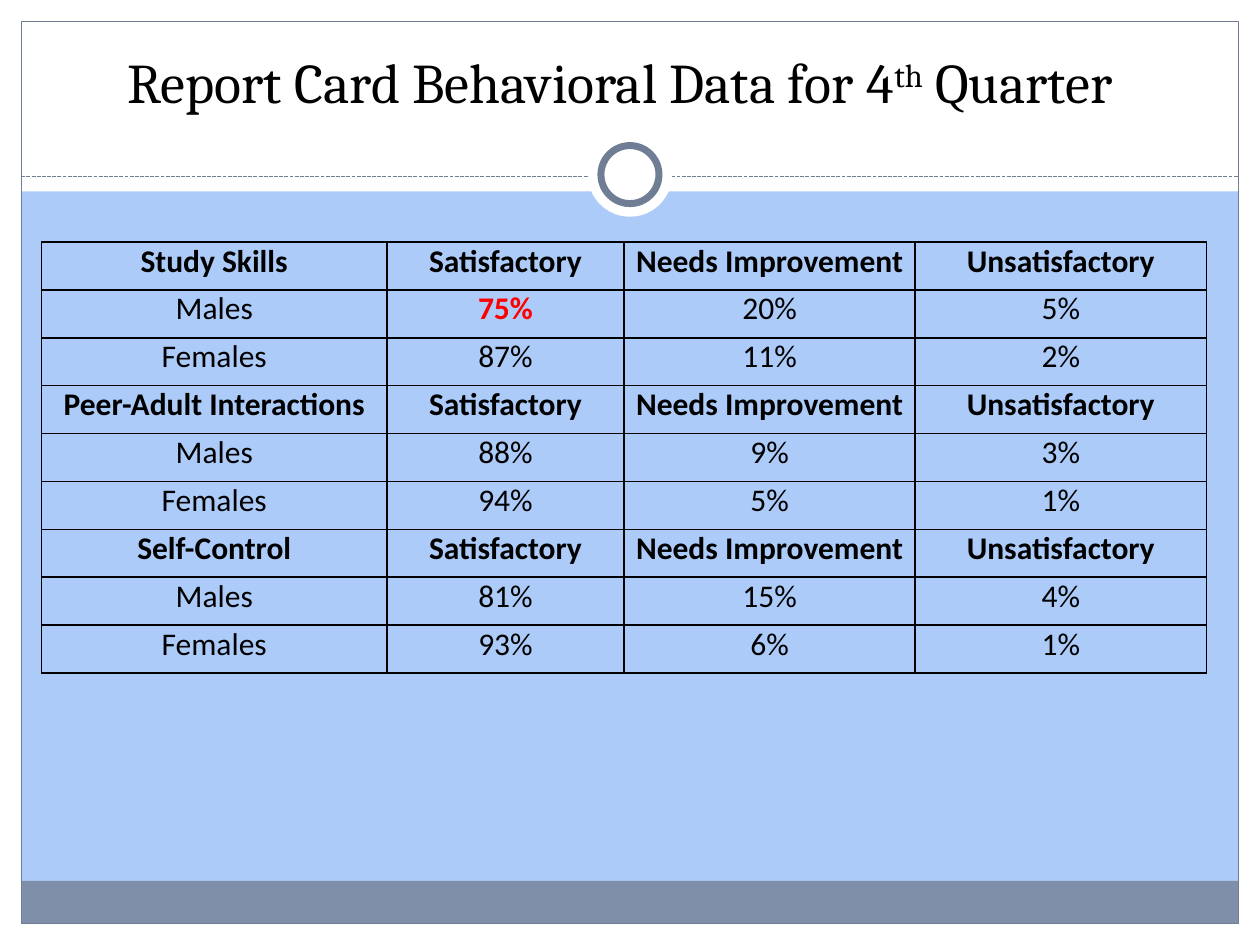
import pptx
import pptx.util
import pptx.oxml
import pptx.oxml.ns
import pptx.dml.color
import pptx.enum.dml
import pptx.enum.shapes
import pptx.enum.text

Cm, Pt = pptx.util.Cm, pptx.util.Pt
SHAPE = pptx.enum.shapes.MSO_SHAPE

TITLE = [("Report Card Behavioral Data for 4", 0), ("th", 30), (" Quarter", 0)]
RATINGS = ["Satisfactory", "Needs Improvement", "Unsatisfactory"]
SKILLS = [
    ("Study Skills", ["75%", "20%", "5%"], ["87%", "11%", "2%"]),
    ("Peer-Adult Interactions", ["88%", "9%", "3%"], ["94%", "5%", "1%"]),
    ("Self-Control", ["81%", "15%", "4%"], ["93%", "6%", "1%"]),
]
FLAGGED = {"75%"}

THEME = {
    "background": "ACCBF9", "paper": "FFFFFF", "footer": "7F8FA9",
    "rule": "707E95", "text": "000000", "flag": "FF0000",
    "title_font": "Cambria", "table_font": "Calibri",
    "title_size": 32, "table_size": 18,
}

W, H = 25.4, 19.05
MARGIN = 0.43
HEADER_H = 3.86
FOOTER_H = 0.86
RULE_Y = 3.56
RING_Y = 3.52
TABLE_LEFT, TABLE_TOP = 0.84, 4.88
COL_WIDTHS = [6.96, 4.78, 5.87, 5.87]
ROW_H = 0.965


def rgb(name):
    return pptx.dml.color.RGBColor.from_string(THEME[name])


def add_text(p, text, font, size, color="text", bold=False, baseline=0):
    p.alignment = pptx.enum.text.PP_ALIGN.CENTER
    r = p.add_run()
    r.text = text
    r.font.name = THEME[font]
    r.font.size = Pt(THEME[size])
    r.font.bold = bold
    r.font.color.rgb = rgb(color)
    if baseline:
        r.font._element.set("baseline", str(baseline * 1000))


def add_shape(s, kind, x, y, w, h, fill=None, line=None, weight=0.75):
    sp = s.shapes.add_shape(kind, Cm(x), Cm(y), Cm(w), Cm(h))
    sp.shadow.inherit = False
    if fill:
        sp.fill.solid()
        sp.fill.fore_color.rgb = rgb(fill)
    else:
        sp.fill.background()
    if line:
        sp.line.color.rgb = rgb(line)
        sp.line.width = Pt(weight)
    else:
        sp.line.fill.background()


def add_circle(s, size, **style):
    add_shape(s, SHAPE.OVAL, (W - size) / 2, RING_Y - size / 2, size, size, **style)


def add_frame(s):
    inner_w, inner_h = W - 2 * MARGIN, H - 2 * MARGIN
    for box in [(0, H - MARGIN, W, MARGIN), (0, 0, W, HEADER_H),
                (0, 0, MARGIN, H), (W - MARGIN, 0, MARGIN, H)]:
        add_shape(s, SHAPE.RECTANGLE, *box, fill="paper")
    add_shape(s, SHAPE.RECTANGLE, MARGIN, H - MARGIN - FOOTER_H, inner_w, FOOTER_H,
              fill="footer")
    add_shape(s, SHAPE.RECTANGLE, MARGIN, MARGIN, inner_w, inner_h, line="rule")
    rule = s.shapes.add_connector(pptx.enum.shapes.MSO_CONNECTOR.STRAIGHT,
                                  Cm(MARGIN), Cm(RULE_Y), Cm(W - MARGIN), Cm(RULE_Y))
    rule.line.color.rgb = rgb("rule")
    rule.line.width = Pt(0.75)
    rule.line.dash_style = pptx.enum.dml.MSO_LINE.SQUARE_DOT
    pptx.oxml.ns.qn("a:effectLst")
    rule.element.spPr.append(pptx.oxml.parse_xml(
        f'<a:effectLst {pptx.oxml.ns.nsdecls("a")}/>'))
    add_circle(s, 1.7, fill="paper")
    add_circle(s, 1.17, fill="paper", line="rule", weight=4)


def style_cell(cell):
    tc_pr = cell._tc.get_or_add_tcPr()
    for side in "LRTB":
        tc_pr.append(pptx.oxml.parse_xml(
            f'<a:ln{side} {pptx.oxml.ns.nsdecls("a")} w="12700"><a:solidFill>'
            f'<a:srgbClr val="{THEME["text"]}"/></a:solidFill></a:ln{side}>'))
    cell.fill.background()
    cell.margin_left = cell.margin_right = Cm(0.18)
    cell.margin_top = cell.margin_bottom = 0


def add_results(s):
    rows = []
    for skill, males, females in SKILLS:
        rows += [[skill] + RATINGS, ["Males"] + males, ["Females"] + females]
    table = s.shapes.add_table(len(rows), len(COL_WIDTHS), Cm(TABLE_LEFT), Cm(TABLE_TOP),
                               Cm(sum(COL_WIDTHS)), Cm(ROW_H * len(rows))).table
    table.first_row = table.horz_banding = False
    for col, width in zip(table.columns, COL_WIDTHS):
        col.width = Cm(width)
    for i, values in enumerate(rows):
        table.rows[i].height = Cm(ROW_H)
        for j, value in enumerate(values):
            cell = table.cell(i, j)
            style_cell(cell)
            flagged = value in FLAGGED
            add_text(cell.text_frame.paragraphs[0], value, "table_font", "table_size",
                     color="flag" if flagged else "text",
                     bold=flagged or i % 3 == 0)


def add_title(s):
    sp = s.shapes.title
    sp.left, sp.top, sp.width, sp.height = Cm(1.07), Cm(0.84), Cm(22.86), Cm(1.63)
    tf = sp.text_frame
    tf.word_wrap = True
    tf.vertical_anchor = pptx.enum.text.MSO_ANCHOR.TOP
    for text, baseline in TITLE:
        add_text(tf.paragraphs[0], text, "title_font", "title_size", baseline=baseline)
    s.shapes.element.append(sp.element)


def main():
    prs = pptx.Presentation()
    prs.slide_width, prs.slide_height = Cm(W), Cm(H)
    s = prs.slides.add_slide(prs.slide_layouts.get_by_name("Title Only"))
    s.background.fill.solid()
    s.background.fill.fore_color.rgb = rgb("background")
    add_frame(s)
    add_results(s)
    add_title(s)
    prs.save("out.pptx")


if __name__ == "__main__":
    main()
